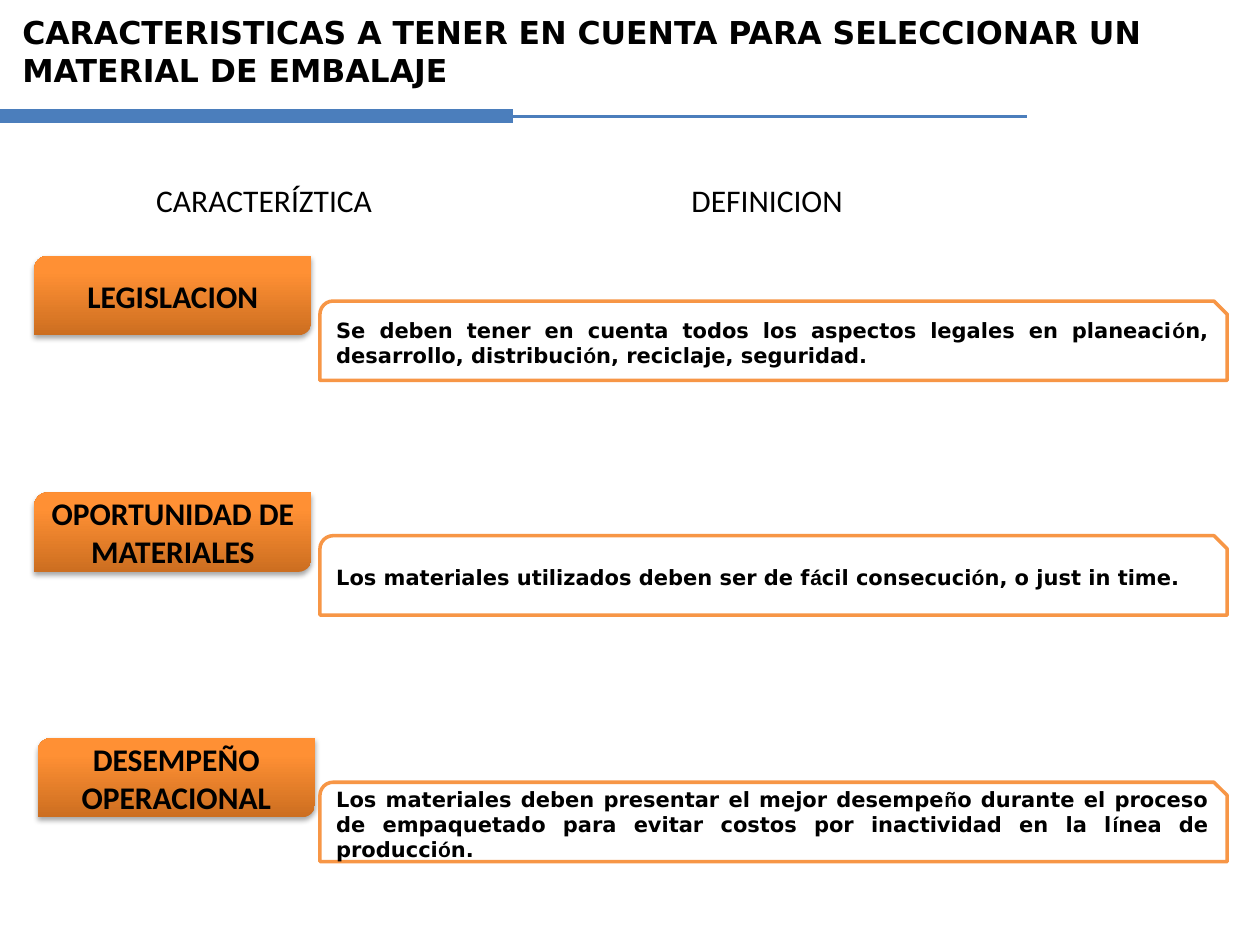
from dataclasses import dataclass
from itertools import groupby
from typing import NamedTuple

from lxml import etree
from pptx import Presentation
from pptx import util as u
from pptx.dml.color import RGBColor
from pptx.enum import shapes, text
from pptx.oxml.ns import qn


@dataclass(frozen=True)
class Theme:
    ink: str = "000000"
    paper: str = "FFFFFF"
    edge: str = "F79646"
    rule: str = "4B7EBC"
    glow: tuple = ((0, "CC6E20"), (80, "FF9034"), (100, "FF9136"))
    head: str = "DejaVu Sans"
    body: str = "Calibri"
    accent: str = "Arial"
    large: int = 18
    small: int = 12


class Box(NamedTuple):
    left: float
    top: float
    width: float
    height: float

    def cm(self) -> list:
        return [u.Cm(n) for n in self]


class Trait(NamedTuple):
    name: str
    note: str
    left: float
    top: float
    low: float  # top of the definition


THEME = Theme()
PLAIN = {"size": u.Pt(THEME.large), "name": THEME.body, "bold": False}
TITLE = PLAIN | {"name": THEME.head, "bold": True}
LABEL = PLAIN | {"bold": True}
NOTE = TITLE | {"size": u.Pt(THEME.small)}

TRAITS = [
    Trait("LEGISLACION",
          "Se deben tener en cuenta todos los aspectos legales en planeación, "
          "desarrollo, distribución, reciclaje, seguridad.", 0.69, 5.16, 6.07),
    Trait("OPORTUNIDAD DE MATERIALES",
          "Los materiales utilizados deben ser de fácil consecución, o just in time.",
          0.69, 9.93, 10.8),
    Trait("DESEMPEÑO OPERACIONAL",
          "Los materiales deben presentar el mejor desempeño durante el proceso de "
          "empaquetado para evitar costos por inactividad en la línea de producción.",
          0.76, 14.88, 15.77),
]


def color(code: str) -> RGBColor:
    return RGBColor.from_string(code)


def add_run(para, words: str, style: dict) -> None:
    run = para.add_run()
    run.text = words
    for key, value in style.items():
        setattr(run.font, key, value)
    run.font.color.rgb = color(THEME.ink)


def add_text(slide, box: Box, words: str, style: dict, anchor) -> None:
    frame = slide.shapes.add_textbox(*box.cm()).text_frame
    frame.word_wrap = True
    frame.auto_size = text.MSO_AUTO_SIZE.SHAPE_TO_FIT_TEXT
    frame.vertical_anchor = anchor
    add_run(frame.paragraphs[0], words, style)


def add_panel(slide, kind, box: Box, align):
    panel = slide.shapes.add_shape(kind, *box.cm())
    panel.shadow.inherit = False
    panel.text_frame.vertical_anchor = text.MSO_ANCHOR.MIDDLE
    para = panel.text_frame.paragraphs[0]
    para.alignment = align
    return panel, para


def add_color(parent, code: str):
    return etree.SubElement(parent, qn("a:srgbClr"), val=code)


def add_label(slide, box: Box, words: str) -> None:
    panel, para = add_panel(slide, shapes.MSO_SHAPE.ROUND_2_DIAG_RECTANGLE,
                            box, text.PP_ALIGN.CENTER)
    panel.line.fill.background()
    # Three-stop gradient, dark at the bottom
    panel.fill.gradient()
    panel.fill.gradient_angle = 90
    props = panel._element.spPr
    stops = props.find(".//" + qn("a:gsLst"))
    for stop in list(stops):
        stops.remove(stop)
    for pos, code in THEME.glow:
        add_color(etree.SubElement(stops, qn("a:gs"), pos=str(pos * 1000)), code)
    # Soft shadow below
    shade = etree.SubElement(props.find(qn("a:effectLst")), qn("a:outerShdw"),
                             blurRad=str(u.Pt(3.1)), dist=str(u.Pt(1.8)),
                             dir="5400000", rotWithShape="0")
    etree.SubElement(add_color(shade, THEME.ink), qn("a:alpha"), val="35000")
    add_run(para, words, LABEL)


def add_note(slide, box: Box, words: str) -> None:
    panel, para = add_panel(slide, shapes.MSO_SHAPE.SNIP_ROUND_RECTANGLE,
                            box, text.PP_ALIGN.JUSTIFY)
    panel.fill.solid()
    panel.fill.fore_color.rgb = color(THEME.paper)
    panel.line.color.rgb = color(THEME.edge)
    panel.line.width = u.Pt(2)
    # Accented letters take their own font
    for plain, part in groupby(words, str.isascii):
        font = THEME.head if plain else THEME.accent
        add_run(para, "".join(part), NOTE | {"name": font})


def add_rule(slide, end: float, top: float, width: float) -> None:
    rule = slide.shapes.add_connector(shapes.MSO_CONNECTOR.STRAIGHT,
                                      0, u.Cm(top), u.Cm(end), u.Cm(top))
    rule.line.color.rgb = color(THEME.rule)
    rule.line.width = u.Pt(width)
    etree.SubElement(rule._element.spPr, qn("a:effectLst"))


def main() -> None:
    deck = Presentation()
    deck.slide_width, deck.slide_height = u.Cm(25.4), u.Cm(19.05)
    slide = deck.slides.add_slide(deck.slide_layouts[6])

    # Title and column heads
    add_text(slide, Box(0.2, 0.13, 24.92, 1.78),
             "CARACTERISTICAS A TENER EN CUENTA PARA SELECCIONAR UN "
             "MATERIAL DE EMBALAJE", TITLE, text.MSO_ANCHOR.MIDDLE)
    for left, words in ((2.9, "CARACTERÍZTICA"), (13.69, "DEFINICION")):
        add_text(slide, Box(left, 3.53, 5, 1.02), words, PLAIN, text.MSO_ANCHOR.TOP)

    # Rules under the title
    for end, width in ((20.7, 1.75), (10.34, 8)):
        add_rule(slide, end, 2.34, width)

    # Traits with their definitions
    for trait in TRAITS:
        add_label(slide, Box(trait.left, trait.top, 5.59, 1.6), trait.name)
        add_note(slide, Box(6.45, trait.low, 18.29, 1.6), trait.note)

    deck.save("out.pptx")


if __name__ == "__main__":
    main()
